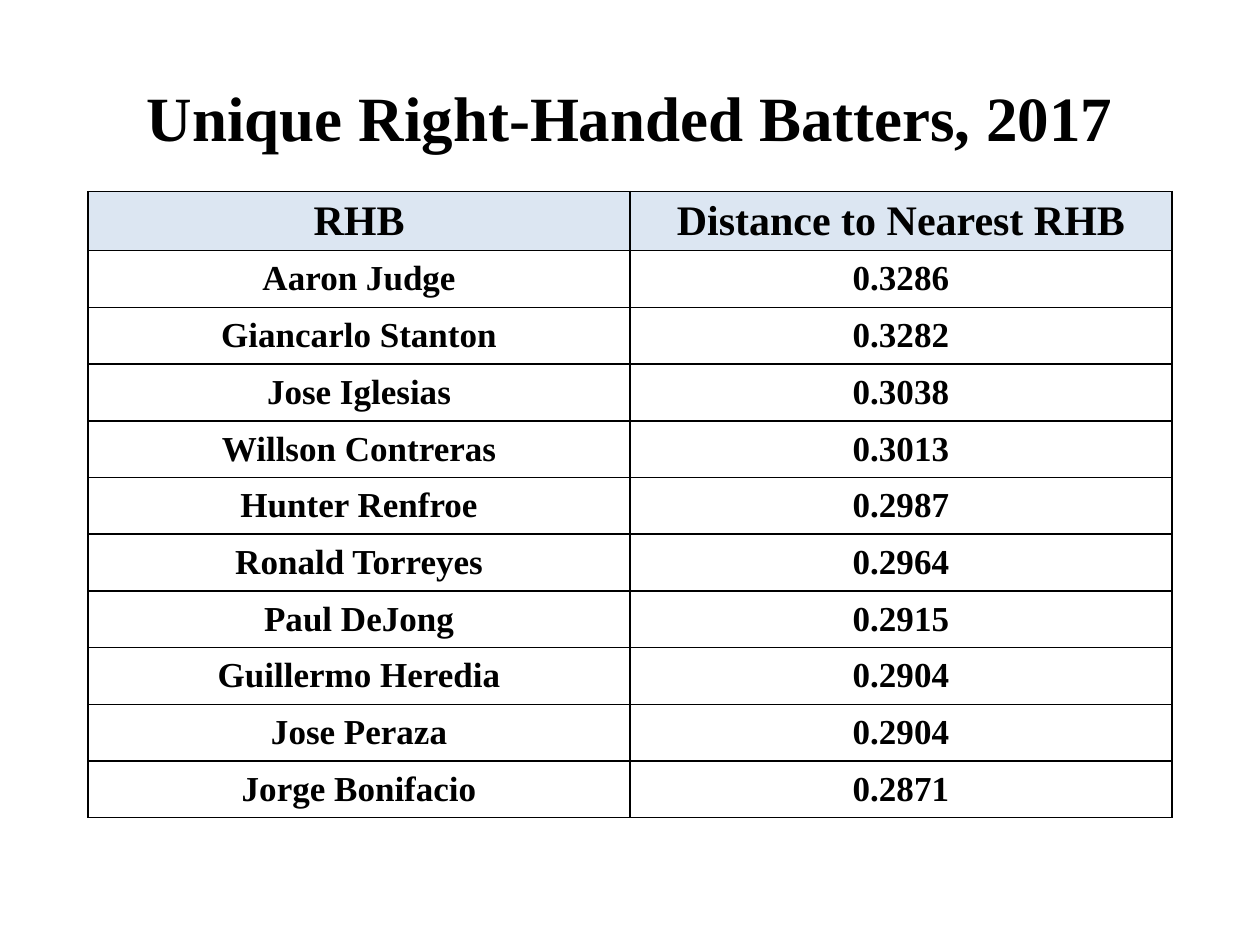
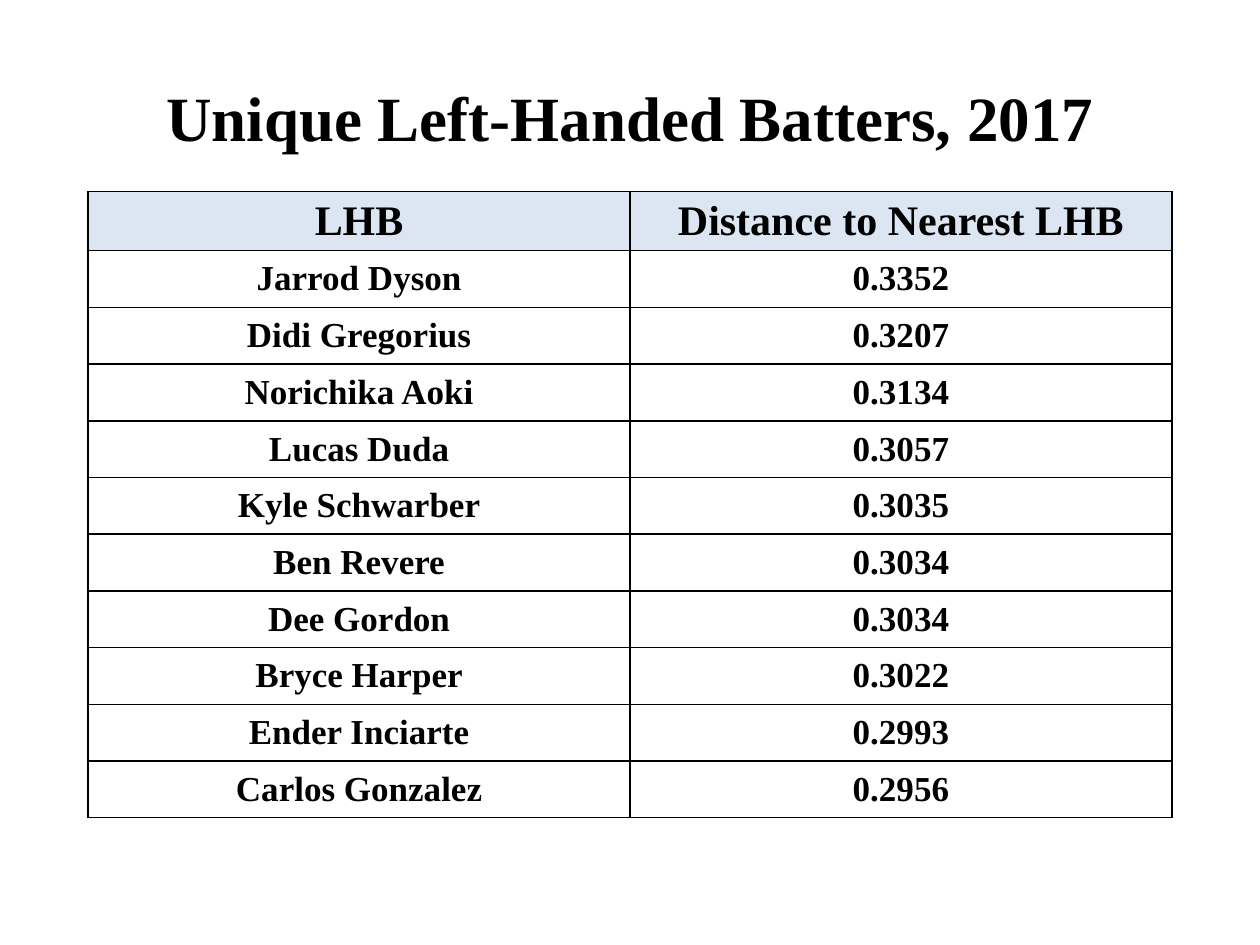
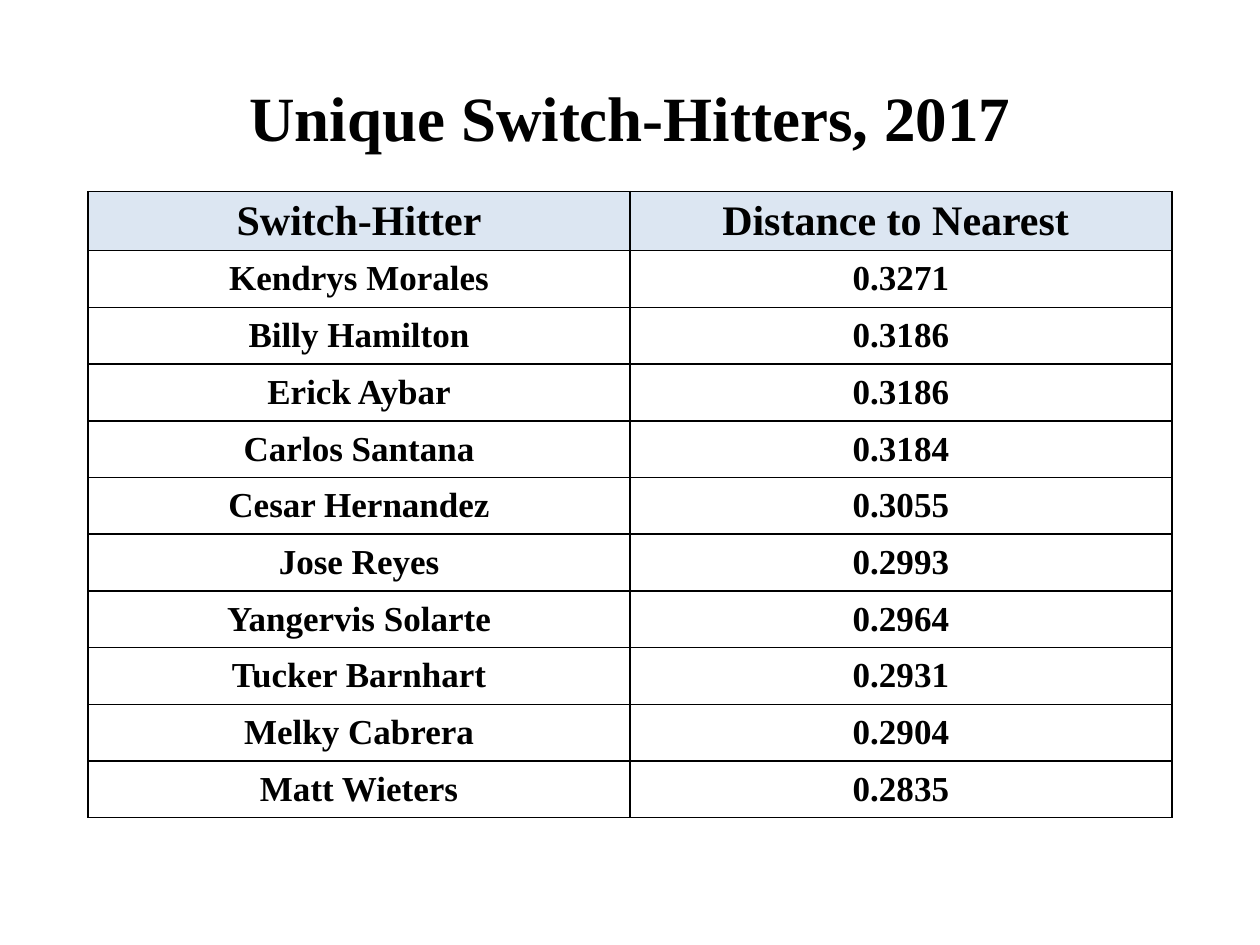
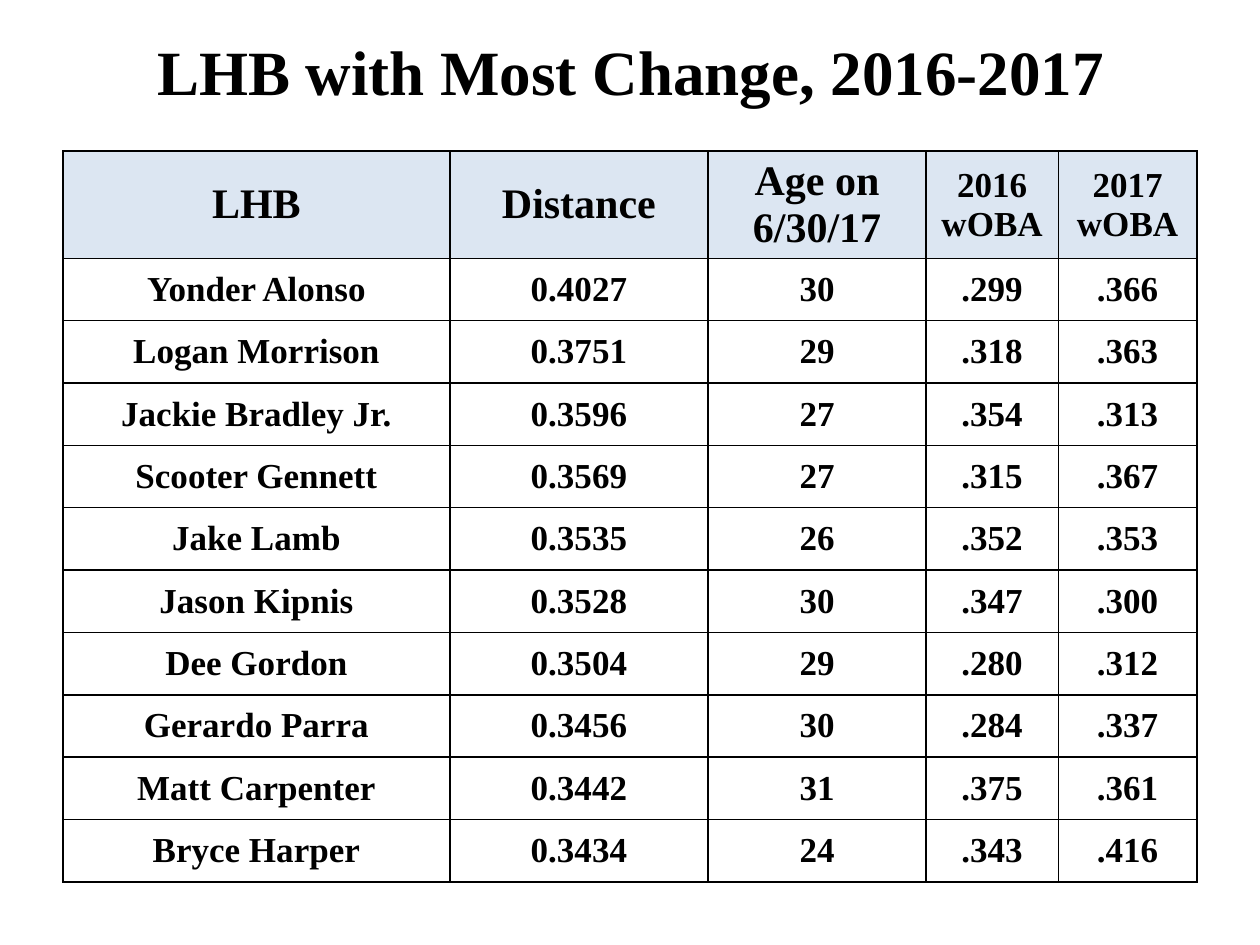
from dataclasses import dataclass

from lxml.etree import SubElement
from pptx import Presentation
from pptx.dml.color import RGBColor
from pptx.enum.text import MSO_ANCHOR as Anchor, PP_ALIGN as Align
from pptx.oxml.ns import qn
from pptx.util import Inches, Pt


@dataclass(frozen=True)
class Theme:
    font: str = "Times New Roman"
    ink: str = "000000"
    header_fill: str = "DCE6F2"
    title_size: int = 36
    header_size: int = 24
    body_size: int = 20
    border_width: int = 1


theme = Theme()


def write(frame, text, size=theme.body_size, color=theme.ink, align=Align.CENTER):
    para = frame.paragraphs[0]
    para.alignment = align
    span = para.add_run()
    span.text = text
    span.font.name = theme.font
    span.font.size = Pt(size)
    span.font.bold = True
    span.font.color.rgb = RGBColor.from_string(color)


def add_borders(cell):
    properties = cell._tc.get_or_add_tcPr()
    for side in ("a:lnL", "a:lnR", "a:lnT", "a:lnB"):
        line = SubElement(properties, qn(side), w=str(Pt(theme.border_width)))
        fill = SubElement(line, qn("a:solidFill"))
        SubElement(fill, qn("a:srgbClr"), val=theme.ink)


wide_layout = {
    "title_box": (0.5, 0.3, 9, 1.25),
    "corner": (0.7, 1.52),
    "columns": (4.3, 4.3),
    "header_height": 0.47,
    "table_height": 4.97,
    "header_sizes": (theme.header_size,) * 2,
}
change_layout = {
    "title_box": (1.11, 0.2, 7.79, 0.71),
    "corner": (0.5, 1.2),
    "columns": (3.07, 2.05, 1.73, 1.05, 1.1),
    "header_height": 0.85,
    "table_height": 5.8,
    "header_sizes": (theme.header_size,) * 3 + (theme.body_size,) * 2,
}

pages = [
    ("Unique Right-Handed Batters, 2017", wide_layout, [
        ("RHB", "Distance to Nearest RHB"),
        ("Aaron Judge", "0.3286"),
        ("Giancarlo Stanton", "0.3282"),
        ("Jose Iglesias", "0.3038"),
        ("Willson Contreras", "0.3013"),
        ("Hunter Renfroe", "0.2987"),
        ("Ronald Torreyes", "0.2964"),
        ("Paul DeJong", "0.2915"),
        ("Guillermo Heredia", "0.2904"),
        ("Jose Peraza", "0.2904"),
        ("Jorge Bonifacio", "0.2871"),
    ]),
    ("Unique Left-Handed Batters, 2017", wide_layout, [
        ("LHB", "Distance to Nearest LHB"),
        ("Jarrod Dyson", "0.3352"),
        ("Didi Gregorius", "0.3207"),
        ("Norichika Aoki", "0.3134"),
        ("Lucas Duda", "0.3057"),
        ("Kyle Schwarber", "0.3035"),
        ("Ben Revere", "0.3034"),
        ("Dee Gordon", "0.3034"),
        ("Bryce Harper", "0.3022"),
        ("Ender Inciarte", "0.2993"),
        ("Carlos Gonzalez", "0.2956"),
    ]),
    ("Unique Switch-Hitters, 2017", wide_layout, [
        ("Switch-Hitter", "Distance to Nearest "),
        ("Kendrys Morales", "0.3271"),
        ("Billy Hamilton", "0.3186"),
        ("Erick Aybar", "0.3186"),
        ("Carlos Santana", "0.3184"),
        ("Cesar Hernandez", "0.3055"),
        ("Jose Reyes", "0.2993"),
        ("Yangervis Solarte", "0.2964"),
        ("Tucker Barnhart", "0.2931"),
        ("Melky Cabrera", "0.2904"),
        ("Matt Wieters", "0.2835"),
    ]),
    ("LHB with Most Change, 2016-2017", change_layout, [
        ("LHB", "Distance", "Age on 6/30/17", "2016 wOBA", "2017 wOBA"),
        ("Yonder Alonso", "0.4027", "30", ".299", ".366"),
        ("Logan Morrison", "0.3751", "29", ".318", ".363"),
        ("Jackie Bradley Jr.", "0.3596", "27", ".354", ".313"),
        ("Scooter Gennett", "0.3569", "27", ".315", ".367"),
        ("Jake Lamb", "0.3535", "26", ".352", ".353"),
        ("Jason Kipnis", "0.3528", "30", ".347", ".300"),
        ("Dee Gordon", "0.3504", "29", ".280", ".312"),
        ("Gerardo Parra", "0.3456", "30", ".284", ".337"),
        ("Matt Carpenter", "0.3442", "31", ".375", ".361"),
        ("Bryce Harper", "0.3434", "24", ".343", ".416"),
    ]),
]

deck = Presentation()
deck.slide_width = Inches(10)
deck.slide_height = Inches(7.5)
title_only = deck.slide_layouts[5]

for heading, layout, rows in pages:
    page = deck.slides.add_slide(title_only)
    title = page.shapes.title
    title.left, title.top, title.width, title.height = map(Inches, layout["title_box"])
    title.text_frame.vertical_anchor = Anchor.MIDDLE
    write(title.text_frame, heading, size=theme.title_size)

    columns = layout["columns"]
    left, top = layout["corner"]
    table = page.shapes.add_table(
        len(rows), len(columns), Inches(left), Inches(top),
        Inches(sum(columns)), Inches(layout["table_height"]),
    ).table
    table.first_row = False
    table.horz_banding = False
    for column, width in zip(table.columns, columns):
        column.width = Inches(width)

    body_height = (layout["table_height"] - layout["header_height"]) / (len(rows) - 1)
    for row_index, values in enumerate(rows):
        is_header = row_index == 0
        table.rows[row_index].height = Inches(layout["header_height"] if is_header else body_height)
        for column_index, value in enumerate(values):
            cell = table.cell(row_index, column_index)
            cell.vertical_anchor = Anchor.MIDDLE
            add_borders(cell)
            if is_header:
                cell.fill.solid()
                cell.fill.fore_color.rgb = RGBColor.from_string(theme.header_fill)
                write(cell.text_frame, value, size=layout["header_sizes"][column_index])
            else:
                cell.fill.background()
                write(cell.text_frame, value)

deck.save("out.pptx")
